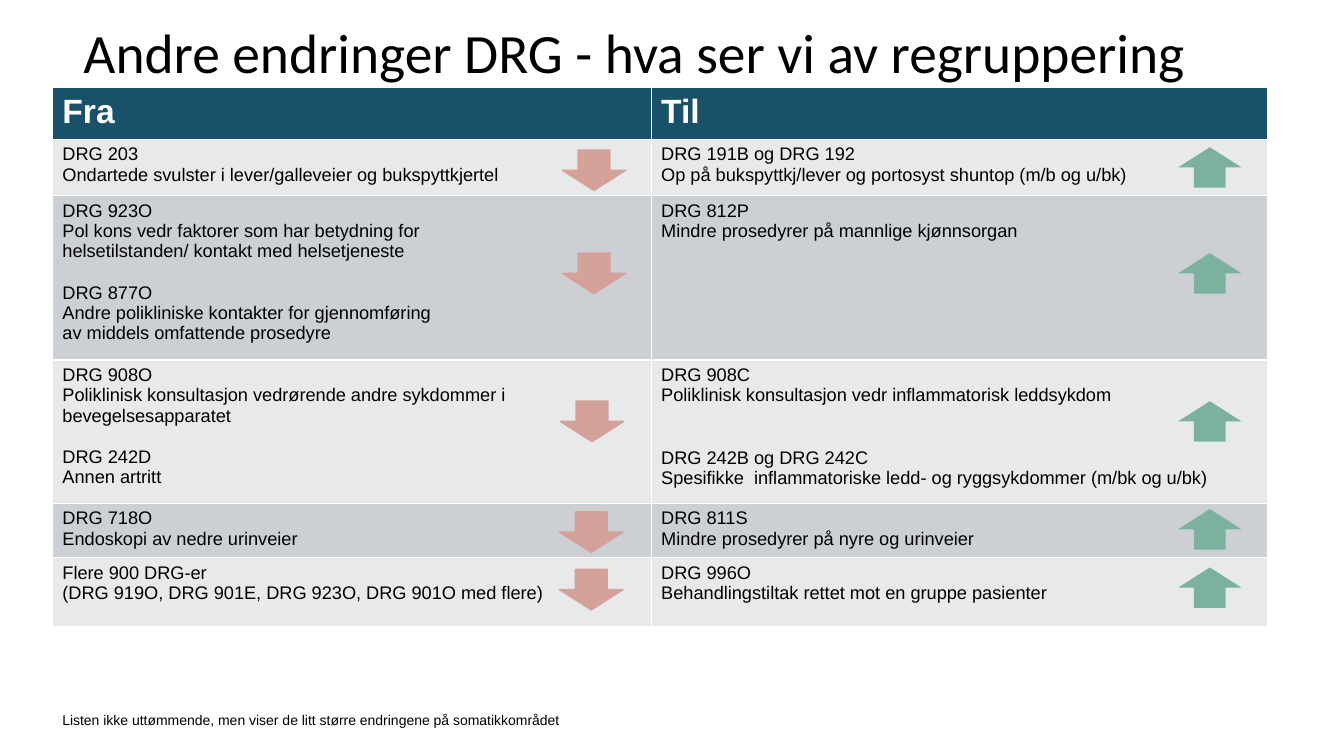
from collections import namedtuple

from pptx import Presentation
from pptx import util as u
from pptx.dml.color import RGBColor
from pptx.enum import shapes, text

COLORS = {
    "text": "000000", "header_text": "FFFFFF", "header": "19516A",
    "light": "E8E9EB", "dark": "CCD0D4",
    "down": "D4A298", "up": "7CB1A0",
}
LINE_PT = 15  # height of one line of table text

# Each cell is a list of groups of lines; gap is the empty lines between groups.
# Arrow positions are in cm from the top left corner of the table.
Change = namedtuple("Change", "height fra til gap_til down up_top")
CHANGES = [
    Change(1.42,
           [["DRG 203", "Ondartede svulster i lever/galleveier og bukspyttkjertel"]],
           [["DRG 191B og DRG 192",
             "Op på bukspyttkj/lever og portosyst shuntop (m/b og u/bk)"]],
           1, (12.85, 1.57), 1.5),
    Change(4.14,
           [["DRG 923O", "Pol kons vedr faktorer som har betydning for",
             "helsetilstanden/ kontakt med helsetjeneste"],
            ["DRG 877O", "Andre polikliniske kontakter for gjennomføring",
             "av middels omfattende prosedyre"]],
           [["DRG 812P", "Mindre prosedyrer på mannlige kjønnsorgan"]],
           1, (12.85, 4.17), 4.17),
    Change(3.61,
           [["DRG 908O",
             "Poliklinisk konsultasjon vedrørende andre sykdommer i bevegelsesapparatet"],
            ["DRG 242D", "Annen artritt"]],
           [["DRG 908C", "Poliklinisk konsultasjon vedr inflammatorisk leddsykdom"],
            ["DRG 242B og DRG 242C",
             "Spesifikke  inflammatoriske ledd- og ryggsykdommer (m/bk og u/bk)"]],
           2, (12.8, 7.9), 7.9),
    Change(1.37,
           [["DRG 718O", "Endoskopi av nedre urinveier"]],
           [["DRG 811S", "Mindre prosedyrer på nyre og urinveier"]],
           1, (12.78, 10.69), 10.62),
    Change(1.75,
           [["Flere 900 DRG-er", "(DRG 919O, DRG 901E, DRG 923O, DRG 901O med flere)"]],
           [["DRG 996O", "Behandlingstiltak rettet mot en gruppe pasienter"]],
           1, (12.78, 12.14), 12.09),
]


def rgb(name):
    return RGBColor.from_string(COLORS[name])


def style(paragraph, size, color="text", face="Arial", bold=False):
    font = paragraph.font
    font.name, font.size, font.bold = face, u.Pt(size), bold
    font.color.rgb = rgb(color)


def add_title(slide, left, top, width, height):
    title = slide.shapes.title
    title.left, title.top, title.width, title.height = map(
        u.Cm, (left, top, width, height))
    frame = title.text_frame
    frame.text = "Andre endringer DRG - hva ser vi av regruppering"
    frame.auto_size = text.MSO_AUTO_SIZE.NONE
    frame.vertical_anchor = text.MSO_ANCHOR.MIDDLE
    heading = frame.paragraphs[0]
    heading.alignment = text.PP_ALIGN.LEFT
    heading.line_spacing = 0.9
    style(heading, 39.6, face="Calibri")


def fill_cell(cell, groups, fill, gap=1, size=13, color="text", bold=False):
    cell.fill.solid()
    cell.fill.fore_color.rgb = rgb(fill)
    frame = cell.text_frame
    frame.text = "\n".join(line for group in groups for line in group)
    for paragraph in frame.paragraphs:
        style(paragraph, size, color, bold=bold)
    # Space above the first line of every later group
    start = 0
    for group in groups[:-1]:
        start += len(group)
        frame.paragraphs[start].space_before = u.Pt(gap * LINE_PT)


def add_changes_table(slide, left, top, column_widths, header_height):
    heights = [header_height] + [change.height for change in CHANGES]
    table = slide.shapes.add_table(
        len(heights), len(column_widths), u.Cm(left), u.Cm(top),
        u.Cm(sum(column_widths)), u.Cm(sum(heights))).table
    for column, width in zip(table.columns, column_widths):
        column.width = u.Cm(width)
    for row, height in zip(table.rows, heights):
        row.height = u.Cm(height)

    for column, heading in enumerate(("Fra", "Til")):
        fill_cell(table.cell(0, column), [[heading]], "header",
                  size=24, color="header_text", bold=True)
    for row, change in enumerate(CHANGES, start=1):
        band = "light" if row % 2 else "dark"
        fill_cell(table.cell(row, 0), change.fra, band)
        fill_cell(table.cell(row, 1), change.til, band, change.gap_til)


def add_arrow(slide, direction, left, top):
    kind = {"down": shapes.MSO_SHAPE.DOWN_ARROW,
            "up": shapes.MSO_SHAPE.UP_ARROW}[direction]
    arrow = slide.shapes.add_shape(
        kind, u.Cm(left), u.Cm(top), u.Cm(1.6), u.Cm(1.02))
    arrow.shadow.inherit = False
    arrow.fill.solid()
    arrow.fill.fore_color.rgb = rgb(direction)
    if direction == "down":
        arrow.line.color.rgb = rgb(direction)
        arrow.line.width = u.Pt(1)
    else:
        arrow.line.fill.background()


def add_arrows(slide, left, top, up_offset):
    for change in CHANGES:
        down_left, down_top = change.down
        add_arrow(slide, "down", left + down_left, top + down_top)
        add_arrow(slide, "up", left + up_offset, top + change.up_top)


def add_footnote(slide, left, top, width, height):
    footnote = slide.shapes.add_textbox(*map(u.Cm, (left, top, width, height)))
    frame = footnote.text_frame
    frame.word_wrap = False
    frame.auto_size = text.MSO_AUTO_SIZE.SHAPE_TO_FIT_TEXT
    frame.text = ("Listen ikke uttømmende, men viser de litt større endringene "
                  "på somatikkområdet")
    style(frame.paragraphs[0], 10)


def main():
    deck = Presentation()
    deck.slide_width, deck.slide_height = u.Cm(33.87), u.Cm(19.05)
    slide = deck.slides.add_slide(deck.slide_layouts[5])
    left, top = 1.32, 2.21
    add_title(slide, 1.85, 0, 29.21, 2.79)
    add_changes_table(slide, left, top, (15.09, 15.54), 1.3)
    add_footnote(slide, left, 17.81, 13.13, 0.69)
    add_arrows(slide, left, top, 28.37)
    deck.save("out.pptx")


if __name__ == "__main__":
    main()
